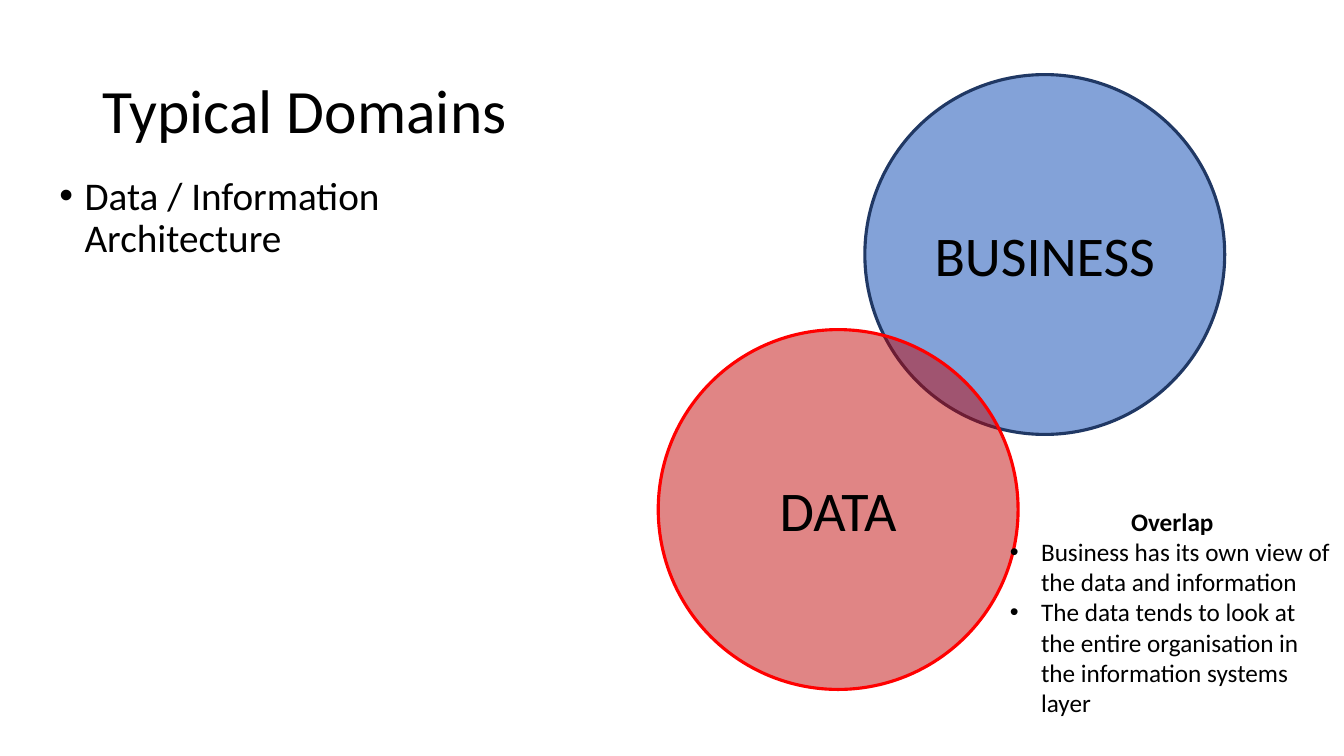
import pptx
import pptx.dml.color
import pptx.enum.shapes
import pptx.enum.text
import pptx.oxml.ns
import pptx.util
from lxml import etree

ALIGN = pptx.enum.text.PP_ALIGN
ANCHOR = pptx.enum.text.MSO_ANCHOR


def color(hex_string):
    return pptx.dml.color.RGBColor.from_string(hex_string)


def add_bullet(paragraph, indent):
    """Give the paragraph a round bullet with a hanging indent in inches."""
    properties = paragraph._p.get_or_add_pPr()
    properties.set("marL", str(pptx.util.Inches(indent)))
    properties.set("indent", str(-pptx.util.Inches(indent)))
    font = etree.SubElement(properties, pptx.oxml.ns.qn("a:buFont"))
    font.set("typeface", "Arial")
    bullet = etree.SubElement(properties, pptx.oxml.ns.qn("a:buChar"))
    bullet.set("char", "•")


def write(paragraph, text, size=18, bold=False, align=ALIGN.LEFT,
          line_spacing=1.0, space_before=0, indent=None):
    paragraph.alignment = align
    paragraph.line_spacing = line_spacing
    paragraph.space_before = pptx.util.Pt(space_before)
    if indent is not None:
        add_bullet(paragraph, indent)
    run = paragraph.add_run()
    run.text = text
    run.font.name = "Calibri"
    run.font.size = pptx.util.Pt(size)
    run.font.bold = bold
    run.font.color.rgb = color("000000")


class SlideBuilder:
    """Places elements by percent of the slide's width and height."""

    def __init__(self, presentation):
        self.width = presentation.slide_width
        self.height = presentation.slide_height
        self.slide = presentation.slides.add_slide(presentation.slide_layouts[6])

    def across(self, percent):
        return round(self.width * percent / 100)

    def down(self, percent):
        return round(self.height * percent / 100)

    def text_box(self, left, top, width, height, anchor=ANCHOR.TOP):
        shape = self.slide.shapes.add_textbox(
            self.across(left), self.down(top), self.across(width), self.down(height))
        shape.text_frame.word_wrap = True
        shape.text_frame.vertical_anchor = anchor
        return shape.text_frame

    def circle(self, left, top, diameter, text, fill, opacity, line):
        """The diameter is a percent of the slide's height."""
        size = self.down(diameter)
        shape = self.slide.shapes.add_shape(
            pptx.enum.shapes.MSO_SHAPE.OVAL,
            self.across(left), self.down(top), size, size)
        shape.shadow.inherit = False
        shape.fill.solid()
        shape.fill.fore_color.rgb = color(fill)
        fill_color = shape._element.spPr.find(".//" + pptx.oxml.ns.qn("a:srgbClr"))
        alpha = etree.SubElement(fill_color, pptx.oxml.ns.qn("a:alpha"))
        alpha.set("val", str(opacity * 1000))
        shape.line.color.rgb = color(line)
        shape.line.width = pptx.util.Pt(2.25)
        shape.text_frame.vertical_anchor = ANCHOR.MIDDLE
        write(shape.text_frame.paragraphs[0], text, size=40, align=ALIGN.CENTER)


def main():
    presentation = pptx.Presentation()
    presentation.slide_width = pptx.util.Inches(13.333)
    presentation.slide_height = pptx.util.Inches(7.5)
    builder = SlideBuilder(presentation)

    # Title and topic
    title = builder.text_box(6.88, 5.33, 86.25, 19.33, anchor=ANCHOR.MIDDLE)
    write(title.paragraphs[0], "Typical Domains", size=44, line_spacing=0.9)
    topic = builder.text_box(3.68, 22.67, 36.3, 16.8)
    write(topic.paragraphs[0], "Data / Information Architecture", size=28,
          line_spacing=0.9, space_before=10, indent=0.25)

    # Overlapping domains
    builder.circle(64.35, 9.87, 47.6, "BUSINESS", "4472C4", 66, "203864")
    builder.circle(48.98, 43.6, 47.6, "DATA", "C00000", 48, "FF0000")

    # Notes on the overlap
    overlap = builder.text_box(74.4, 66.27, 25.65, 29.6)
    write(overlap.paragraphs[0], "Overlap", bold=True, align=ALIGN.CENTER)
    for point in (
        "Business has its own view of the data and information",
        "The data tends to look at the entire organisation in "
        "the information systems layer",
    ):
        write(overlap.add_paragraph(), point, indent=0.31)

    presentation.save("out.pptx")


if __name__ == "__main__":
    main()
